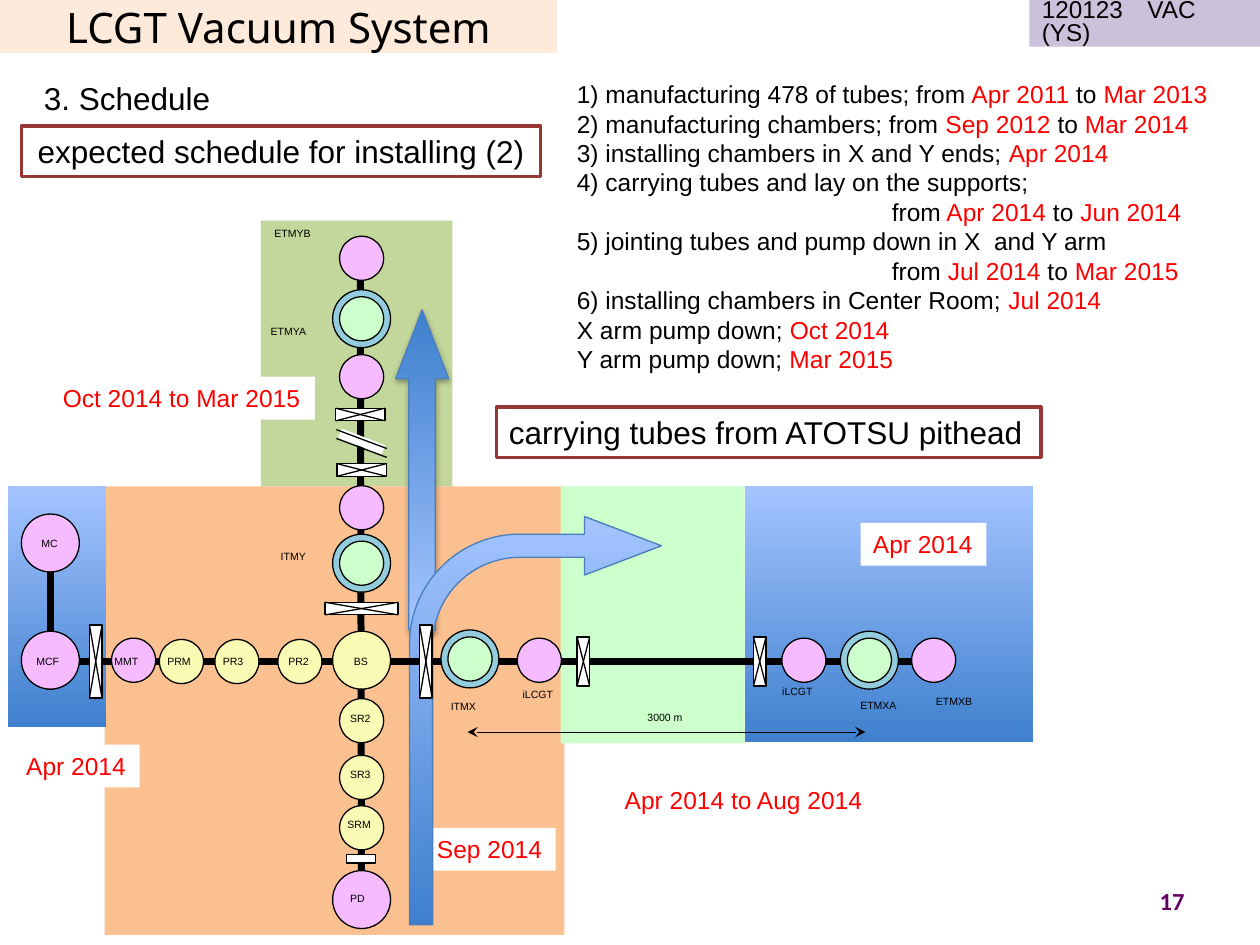
"""Build the vacuum system schedule slide."""
from lxml import etree
from pptx import Presentation
from pptx import util as u
from pptx.dml.color import RGBColor
from pptx.enum import shapes, text
from pptx.oxml import ns


class Theme:
    ink, red, white = "000000", "FF0000", "FFFFFF"
    pink, yellow, mint, ring = "F6BBFF", "F9FAB4", "CCFFCC", "93CDDD"
    green, orange, lilac, cream = "C3D69B", "FAC090", "CCC1DA", "FDEADA"
    brown, steel, plum = "953735", "4B7EBC", "660066"
    blue = ("3F80CE", "A4C4FF")
    face, sans, head = "Arial", "Calibri", "Noto Sans"
    tiny, note, body, large, title = 6, 14, 14, 18, 24


kinds = shapes.MSO_SHAPE
left, mid, right = text.PP_ALIGN.LEFT, text.PP_ALIGN.CENTER, text.PP_ALIGN.RIGHT
top, centre = text.MSO_ANCHOR.TOP, text.MSO_ANCHOR.MIDDLE


def draw(home, kind, box, fill=None, edge=None, wide=0.75, lines=(), size=Theme.note,
         tint=Theme.ink, face=Theme.face, align=left, wrap=True, anchor=top, fit=True):
    """Place a shape, a text box or a given placeholder; text between bars is red."""
    spots = [u.Inches(v) for v in box]
    if kind is None:
        item = home.add_textbox(*spots)
    elif isinstance(kind, kinds):
        item = home.add_shape(kind, *spots)
        item.shadow.inherit = False
    else:
        item = kind
        item.left, item.top, item.width, item.height = spots
    if isinstance(fill, tuple):
        item.fill.gradient()
        item.fill.gradient_angle = 90
        for stop, shade in zip(item.fill.gradient_stops, fill):
            stop.color.rgb = RGBColor.from_string(shade)
    elif fill:
        item.fill.solid()
        item.fill.fore_color.rgb = RGBColor.from_string(fill)
    else:
        item.fill.background()
    if edge:
        item.line.color.rgb = RGBColor.from_string(edge)
        item.line.width = u.Pt(wide)
    else:
        item.line.fill.background()
    if lines:
        frame = item.text_frame
        frame.word_wrap, frame.vertical_anchor = wrap, anchor
        sizes = text.MSO_AUTO_SIZE
        frame.auto_size = sizes.SHAPE_TO_FIT_TEXT if fit else sizes.NONE
        for row, line in enumerate(lines):
            para = frame.add_paragraph() if row else frame.paragraphs[0]
            para.alignment = align
            para.level = 5 if line.startswith("from") else 0
            para.font.size, para.font.name = u.Pt(size), face
            para.font.color.rgb = RGBColor.from_string(tint)
            for turn, part in enumerate(line.split("|")):
                if part:
                    run = para.add_run()
                    run.text = part
                    if turn % 2:
                        run.font.color.rgb = RGBColor.from_string(Theme.red)
    return item


def wire(home, x1, y1, x2, y2, wide=0.75):
    """Place a straight black line without a shadow."""
    ends = [u.Inches(v) for v in (x1, y1, x2, y2)]
    item = home.add_connector(shapes.MSO_CONNECTOR.STRAIGHT, *ends)
    item.line.color.rgb = RGBColor.from_string(Theme.ink)
    item.line.width = u.Pt(wide)
    etree.SubElement(item._element.spPr, ns.qn("a:effectLst"))
    return item


deck = Presentation()
deck.slide_width, deck.slide_height = u.Inches(10), u.Inches(7.5)
slide = deck.slides.add_slide(deck.slide_layouts[5])
page = slide.shapes

draw(page, page.title, (0, 0, 4.42, 0.42), Theme.cream, lines=["LCGT Vacuum System"],
     size=Theme.title, face=Theme.head, align=mid, anchor=centre, fit=False)

for box, fill in [
    ((2.07, 1.75, 1.52, 2.11), Theme.green),
    ((0.83, 3.86, 3.65, 3.56), Theme.orange),
    ((4.45, 3.86, 1.46, 2.04), Theme.mint),
    ((0.06, 3.86, 0.78, 1.91), Theme.blue),
    ((5.91, 3.86, 2.29, 2.03), Theme.blue),
]:
    draw(page, kinds.RECTANGLE, box, fill)

for date, x, y, w, fill in [
    ("Apr 2014", 6.83, 4.15, 1, Theme.white),
    ("Apr 2014", 0.11, 5.91, 1, Theme.white),
    ("Apr 2014 to Aug 2014", 4.86, 6.18, 2.1, None),
    ("Sep 2014", 3.37, 6.57, 1.04, Theme.white),
    ("Oct 2014 to Mar 2015", 0.4, 2.99, 2.1, Theme.white),
]:
    draw(page, kinds.RECTANGLE if fill else None, (x, y, w, 0.34), fill,
         lines=[date], tint=Theme.red, wrap=False)

draw(page, None, (4.48, 0.58, 5.24, 2.46), size=Theme.body, wrap=False, lines=[
    "1) manufacturing 478 of tubes; from| Apr 2011 |to |Mar 2013",
    "2) manufacturing chambers; from |Sep 2012 |to |Mar 2014",
    "3) installing chambers in X and Y ends; |Apr 2014",
    "4) carrying tubes and lay on the supports;",
    "from| Apr 2014 |to |Jun 2014",
    "5) jointing tubes and pump down in X  and Y arm",
    "from |Jul 2014| to |Mar 2015",
    "6) installing chambers in Center Room; |Jul 2014",
    "X arm pump down; |Oct 2014",
    "Y arm pump down; |Mar 2015",
])

count = draw(page, None, (7.17, 6.95, 2.33, 0.4), lines=["17"], tint=Theme.plum,
             face=Theme.sans, align=right, anchor=centre, fit=False)
count.text_frame.paragraphs[0].font.bold = True
stamp = draw(page, kinds.RECTANGLE, (8.17, 0, 1.83, 0.37), Theme.lilac,
             lines=["120123　VAC (YS)"], size=13.9, anchor=centre, fit=False)
stamp.text_frame.paragraphs[0].line_spacing = 0.8

draw(page, kinds.RECTANGLE, (0.17, 1, 4.12, 0.4), None, Theme.brown, 2,
     ["expected schedule for installing (2)"], Theme.large, align=mid)
draw(page, None, (0.25, 0.58, 1.54, 0.4), lines=["3. Schedule"],
     size=Theme.large, wrap=False)
draw(page, kinds.RECTANGLE, (3.94, 3.23, 4.32, 0.4), None, Theme.brown, 2,
     ["carrying tubes from ATOTSU pithead"], Theme.large, wrap=False)

rise = draw(page, kinds.DOWN_ARROW, (3.14, 2.46, 0.42, 2.54), Theme.blue, Theme.steel)
rise.adjustments[0], rise.adjustments[1] = 0.5, 1.3
rise._element.spPr.xfrm.set("flipV", "1")
glow = etree.SubElement(rise._element.spPr.find(ns.qn("a:effectLst")), ns.qn("a:outerShdw"),
                        blurRad=str(u.Pt(3.1)), dist=str(u.Pt(1.8)), dir="5400000",
                        rotWithShape="0")
shade = etree.SubElement(glow, ns.qn("a:srgbClr"), val=Theme.ink)
etree.SubElement(shade, ns.qn("a:alpha"), val="35000")
bend = draw(page, kinds.BENT_ARROW, (3.25, 4.1, 2, 3.24), Theme.blue, Theme.steel)
for spot, value in enumerate((0.092, 0.116, 0.305, 0.438)):
    bend.adjustments[spot] = value

plan = page.add_group_shape().shapes
for ends in [(2.86, 2.22, 2.87, 7.37), (0.4, 4.08, 0.4, 5.48), (0.17, 5.25, 7.24, 5.25)]:
    wire(plan, *ends, 4)

big, small = 0.46, 0.35
mirrors = [(2.87, 2.53), (2.87, 4.47), (3.73, 5.23), (6.9, 5.24)]
for size, fill, spots in [
    (big, Theme.pink, [(2.87, 7.14), (0.4, 5.24), (0.4, 4.31)]),
    (big, Theme.yellow, [(2.87, 5.24)]),
    (big, Theme.ring, mirrors),
    (small, Theme.mint, mirrors),
    (small, Theme.yellow, [(2.38, 5.25), (1.88, 5.25), (1.44, 5.25),
                           (2.87, 5.72), (2.87, 6.17), (2.87, 6.57)]),
    (small, Theme.pink, [(4.28, 5.24), (6.38, 5.24), (1.06, 5.24), (7.41, 5.24),
                         (2.87, 4.03), (2.87, 2.99), (2.87, 2.05)]),
]:
    for x, y in spots:
        draw(plan, kinds.OVAL, (x - size / 2, y - size / 2, size, size), fill, Theme.ink)

for x, y, w, h in [
    (6.03, 5.25, 0.1, 0.39), (4.63, 5.25, 0.1, 0.39), (3.38, 5.25, 0.1, 0.58),
    (0.76, 5.25, 0.1, 0.58), (2.87, 4.83, 0.58, 0.1), (2.87, 3.73, 0.39, 0.1),
    (2.86, 3.29, 0.39, 0.1),
]:
    x1, y1, x2, y2 = x - w / 2, y - h / 2, x + w / 2, y + h / 2
    draw(plan, kinds.RECTANGLE, (x1, y1, w, h), Theme.white, Theme.ink)
    wire(plan, x1, y1, x2, y2)
    wire(plan, x1, y2, x2, y1)

gap = draw(plan, kinds.RECTANGLE, (2.69, 3.47, 0.36, 0.07), Theme.white, Theme.white)
gap.rotation = 21.1
for y in (3.41, 3.48):
    wire(plan, 2.67, y, 3.07, y + 0.15)
draw(plan, kinds.RECTANGLE, (2.75, 6.78, 0.23, 0.07), Theme.white, Theme.ink)

span = wire(plan, 3.71, 5.81, 6.87, 5.81, 0.5)
for end in ("a:headEnd", "a:tailEnd"):
    etree.SubElement(span.line._get_or_add_ln(), ns.qn(end), type="stealth")

for name, x, y, w in [
    ("ETMYB", 2.08, 1.75, 0.6), ("ETMYA", 2.05, 2.53, 0.59), ("ITMY", 2.13, 4.32, 0.46),
    ("ETMXA", 6.73, 5.5, 0.6), ("ETMXB", 7.33, 5.47, 0.6), ("ITMX", 3.48, 5.51, 0.46),
    ("MC", 0.23, 4.21, 0.36), ("MCF", 0.19, 5.15, 0.43), ("MMT", 0.81, 5.15, 0.45),
    ("PRM", 1.23, 5.15, 0.44), ("PR3", 1.67, 5.15, 0.41), ("PR2", 2.19, 5.15, 0.41),
    ("BS", 2.71, 5.15, 0.41), ("SR2", 2.68, 5.6, 0.41), ("SR3", 2.68, 6.05, 0.41),
    ("SRM", 2.66, 6.44, 0.44), ("PD", 2.68, 7.03, 0.45), ("3000 m", 5.04, 5.59, 0.59),
    ("iLCGT", 4.05, 5.41, 0.53), ("iLCGT", 6.11, 5.39, 0.53),
]:
    draw(plan, None, (x, y, w, 0.2), lines=[name], size=Theme.tiny)

deck.save("out.pptx")
